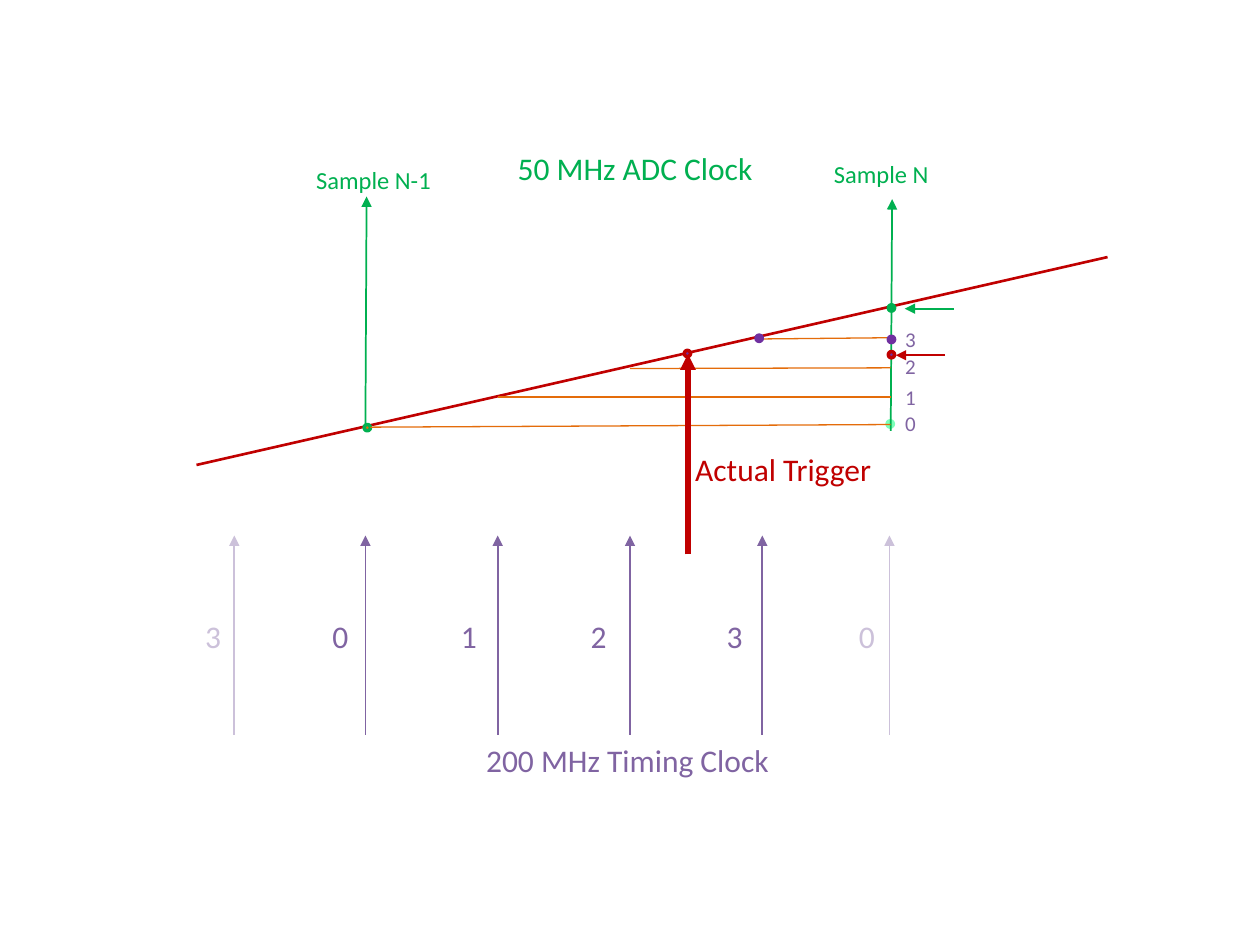
from lxml.etree import SubElement
from pptx import Presentation
from pptx.dml.color import RGBColor
from pptx.enum.shapes import MSO_CONNECTOR, MSO_SHAPE
from pptx.enum.text import MSO_AUTO_SIZE
from pptx.oxml.ns import qn
from pptx.util import Pt

GREEN = "00B050"
PALE_GREEN = "7DFFB8"
RED = "C00000"
ORANGE = "E46C0A"
PURPLE = "8064A2"
PALE_PURPLE = "CCC1DA"
DARK_PURPLE = "7030A0"

DOT_SIZE = 3.6
SAMPLE_N = 509.4


def color(value):
    return RGBColor.from_string(value)


def add_line(slide, start, end, line_color, width, arrow=False):
    points = [Pt(value) for value in (*start, *end)]
    connector = slide.shapes.add_connector(MSO_CONNECTOR.STRAIGHT, *points)
    connector.line.color.rgb = color(line_color)
    connector.line.width = Pt(width)
    if arrow:
        SubElement(connector.line._get_or_add_ln(), qn("a:tailEnd"), type="triangle")
    SubElement(connector._element.spPr, qn("a:effectLst"))


def add_dot(slide, x, y, fill, outline):
    shape = slide.shapes.add_shape(
        MSO_SHAPE.OVAL, Pt(x - DOT_SIZE / 2), Pt(y - DOT_SIZE / 2), Pt(DOT_SIZE), Pt(DOT_SIZE)
    )
    shape.shadow.inherit = False
    shape.fill.solid()
    shape.fill.fore_color.rgb = color(fill)
    shape.line.color.rgb = color(outline)
    shape.line.width = Pt(2)


def add_label(slide, text, left, top, width, size, text_color):
    shape = slide.shapes.add_textbox(Pt(left), Pt(top), Pt(width), Pt(size * 1.2 + 7.2))
    frame = shape.text_frame
    frame.word_wrap = False
    frame.auto_size = MSO_AUTO_SIZE.SHAPE_TO_FIT_TEXT
    run = frame.paragraphs[0].add_run()
    run.text = text
    run.font.name = "Calibri"
    run.font.size = Pt(size)
    run.font.color.rgb = color(text_color)


def add_adc_clock(slide):
    add_dot(slide, 508.7, 242.3, PALE_GREEN, PALE_GREEN)
    add_line(slide, (208.8, 244.8), (209.5, 112.3), GREEN, 1, arrow=True)
    add_line(slide, (112.3, 265.7), (632.9, 146.9), RED, 1.5)
    add_dot(slide, 209.9, 244.4, ORANGE, GREEN)
    add_line(slide, (509, 246.2), (509.8, 113.8), GREEN, 1, arrow=True)
    add_dot(slide, SAMPLE_N, 176, GREEN, GREEN)
    add_label(slide, "50 MHz ADC Clock", 288.7, 81.4, 150.5, 18, GREEN)
    add_label(slide, "Sample N-1", 173.5, 90.7, 80.6, 14, GREEN)
    add_label(slide, "Sample N", 469.4, 87.1, 69.1, 14, GREEN)


def add_timing_clock(slide):
    ticks = [
        ("3", 133.9, 110.2, PALE_PURPLE),
        ("0", 208.8, 182.9, PURPLE),
        ("1", 284.4, 256.3, PURPLE),
        ("2", 360, 330.5, PURPLE),
        ("3", 435.6, 408.2, PURPLE),
        ("0", 508.3, 483.8, PALE_PURPLE),
    ]
    for text, x, label_left, tick_color in ticks:
        add_line(slide, (x, 419.8), (x, 306), tick_color, 1, arrow=True)
        add_label(slide, text, label_left, 349.2, 23.8, 18, tick_color)
    add_label(slide, "200 MHz Timing Clock", 270.7, 419.8, 177.8, 18, PURPLE)


def add_levels(slide):
    levels = [
        ("0", 211.7, 244.1, 242.6, 231.1),
        ("1", 284.4, 226.8, 226.8, 216),
        ("2", 360, 210.6, 210.2, 198.7),
        ("3", 434.9, 193.7, 193, 182.9),
    ]
    for text, left, start_y, end_y, label_top in levels:
        add_line(slide, (left, start_y), (SAMPLE_N - 0.4, end_y), ORANGE, 0.75)
        add_label(slide, text, 510.1, label_top, 20.9, 12, PURPLE)


def add_trigger(slide):
    add_line(slide, (393.1, 316.8), (393.1, 202.3), RED, 3, arrow=True)
    add_label(slide, "Actual Trigger", 390.2, 253.4, 115.9, 18, RED)
    add_dot(slide, 433.8, 193.3, DARK_PURPLE, DARK_PURPLE)
    add_dot(slide, SAMPLE_N, 194, DARK_PURPLE, DARK_PURPLE)
    add_line(slide, (540, 203), (511.9, 203), RED, 1, arrow=True)
    add_dot(slide, SAMPLE_N, 202.7, DARK_PURPLE, RED)
    add_line(slide, (545, 176.4), (517, 176.4), GREEN, 1, arrow=True)
    add_dot(slide, 392.8, 202, DARK_PURPLE, RED)


def main():
    presentation = Presentation()
    presentation.slide_width = Pt(720)
    presentation.slide_height = Pt(540)
    slide = presentation.slides.add_slide(presentation.slide_layouts[6])
    add_adc_clock(slide)
    add_timing_clock(slide)
    add_levels(slide)
    add_trigger(slide)
    presentation.save("out.pptx")


if __name__ == "__main__":
    main()
